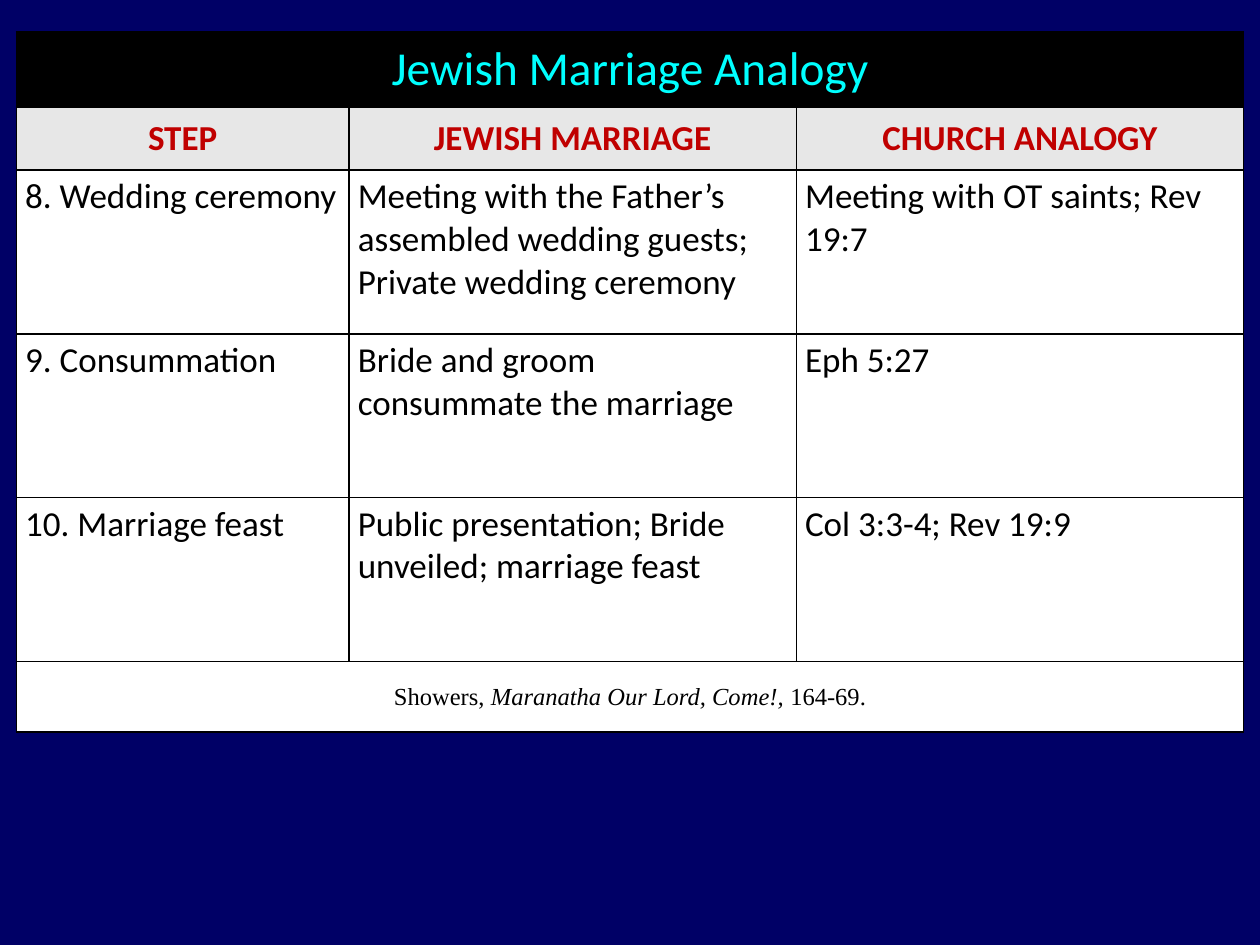
from lxml.etree import SubElement
from pptx import Presentation
from pptx.dml.color import RGBColor
from pptx.enum.text import MSO_ANCHOR, PP_ALIGN
from pptx.oxml.ns import qn
from pptx.util import Inches, Pt

NAVY = RGBColor(0x00, 0x00, 0x66)
BLACK = RGBColor(0x00, 0x00, 0x00)
WHITE = RGBColor(0xFF, 0xFF, 0xFF)
GRAY = RGBColor(0xE7, 0xE7, 0xE7)
RED = RGBColor(0xC0, 0x00, 0x00)
CYAN = RGBColor(0x00, 0xFF, 0xFF)

COLUMN_WIDTHS = [2.64, 3.55, 3.55]
ROW_HEIGHTS = [0.6, 0.5, 1.3, 1.3, 1.3, 0.56]
CELL_MARGINS = {
    "margin_left": Inches(0.07),
    "margin_right": Inches(0.07),
    "margin_top": Inches(0.04),
    "margin_bottom": Inches(0.04),
}

TITLE = {"name": "Calibri", "size": Pt(27), "bold": False}
HEADING = {"name": "Calibri", "size": Pt(20), "bold": True}
BODY = {"name": "Calibri", "size": Pt(20), "bold": False}
SOURCE = {"name": "Times New Roman", "size": Pt(14), "bold": False}

CENTERED = (MSO_ANCHOR.MIDDLE, PP_ALIGN.CENTER)
TOP_LEFT = (MSO_ANCHOR.TOP, PP_ALIGN.LEFT)

BODY_STYLE = (BODY, BLACK, WHITE, TOP_LEFT)
ROWS = [
    (["Jewish Marriage Analogy"], (TITLE, CYAN, BLACK, CENTERED)),
    (["STEP", "JEWISH MARRIAGE", "CHURCH ANALOGY"], (HEADING, RED, GRAY, CENTERED)),
    (["8. Wedding ceremony",
      "Meeting with the Father’s assembled wedding guests; Private wedding ceremony",
      "Meeting with OT saints; Rev 19:7"], BODY_STYLE),
    (["9. Consummation", "Bride and groom consummate the marriage", "Eph 5:27"], BODY_STYLE),
    (["10. Marriage feast", "Public presentation; Bride unveiled; marriage feast",
      "Col 3:3-4; Rev 19:9"], BODY_STYLE),
    (["Showers, |Maranatha Our Lord, Come!, |164-69."], (SOURCE, BLACK, WHITE, CENTERED)),
]


def write_text(cell, text, font_format, color):
    paragraph = cell.text_frame.paragraphs[0]
    for index, part in enumerate(text.split("|")):
        run = paragraph.add_run()
        run.text = part
        for attribute, value in font_format.items():
            setattr(run.font, attribute, value)
        run.font.italic = index % 2 == 1
        run.font.color.rgb = color


def add_borders(cell):
    properties = cell._tc.get_or_add_tcPr()
    for index, side in enumerate(["lnL", "lnR", "lnT", "lnB"]):
        line = SubElement(properties, qn(f"a:{side}"), w=str(Pt(1)))
        fill = SubElement(line, qn("a:solidFill"))
        SubElement(fill, qn("a:srgbClr"), val=str(BLACK))
        properties.insert(index, line)


presentation = Presentation()
presentation.slide_width = Inches(10)
presentation.slide_height = Inches(7.5)
slide = presentation.slides.add_slide(presentation.slide_layouts[6])
slide.background.fill.solid()
slide.background.fill.fore_color.rgb = NAVY

table = slide.shapes.add_table(
    len(ROW_HEIGHTS), len(COLUMN_WIDTHS), Inches(0.13), Inches(0.25),
    Inches(sum(COLUMN_WIDTHS)), Inches(sum(ROW_HEIGHTS)),
).table
for column, width in zip(table.columns, COLUMN_WIDTHS):
    column.width = Inches(width)
for row, height in zip(table.rows, ROW_HEIGHTS):
    row.height = Inches(height)

for row, (texts, style) in zip(table.rows, ROWS):
    font_format, text_color, fill_color, (anchor, alignment) = style
    cells = list(row.cells)
    if len(texts) == 1:
        cells[0].merge(cells[-1])
    for cell in cells:
        cell.fill.solid()
        cell.fill.fore_color.rgb = fill_color
        cell.vertical_anchor = anchor
        for attribute, value in CELL_MARGINS.items():
            setattr(cell, attribute, value)
        add_borders(cell)
    for cell, text in zip(cells, texts):
        cell.text_frame.paragraphs[0].alignment = alignment
        write_text(cell, text, font_format, text_color)

presentation.save("out.pptx")
